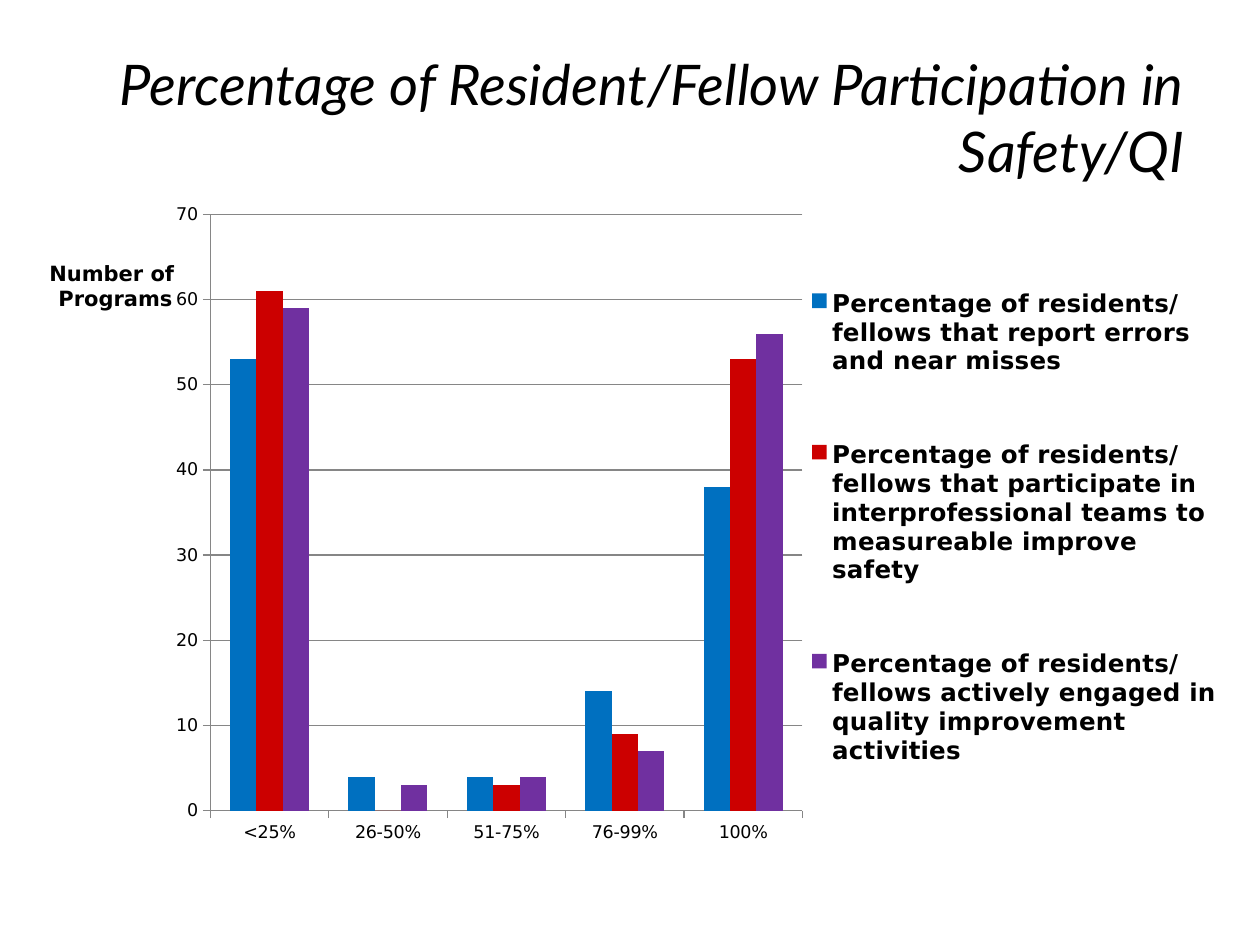
from lxml import etree
from pptx import Presentation
from pptx.chart.data import CategoryChartData
from pptx.dml.color import RGBColor
from pptx.enum.chart import XL_CHART_TYPE, XL_LEGEND_POSITION, XL_TICK_MARK
from pptx.enum.text import MSO_ANCHOR, PP_ALIGN
from pptx.oxml.ns import qn
from pptx.util import Inches, Pt

CLUSTERED = XL_CHART_TYPE.COLUMN_CLUSTERED
LEGEND_RIGHT = XL_LEGEND_POSITION.RIGHT
TICK_OUT, TICK_NONE = XL_TICK_MARK.OUTSIDE, XL_TICK_MARK.NONE
MIDDLE, RIGHT = MSO_ANCHOR.MIDDLE, PP_ALIGN.RIGHT

WIDTH, HEIGHT = Inches(10), Inches(7.5)
BLACK, GRAY = "000000", "868686"
HEADING_FONT, CHART_FONT = "Lato", "DejaVu Sans"
BRACKETS = ["<25%", "26-50%", "51-75%", "76-99%", "100%"]
PARTICIPATION = [
    ("Percentage of residents/fellows that report errors and near misses",
     (53, 4, 4, 14, 38), "0070C0"),
    ("Percentage of residents/fellows that participate in interprofessional "
     "teams to measureable improve safety", (61, 0, 3, 9, 53), "CC0000"),
    ("Percentage of residents/fellows actively engaged in quality improvement "
     "activities", (59, 3, 4, 7, 56), "7030A0"),
]


def color(hex_value):
    """Turn a hex string into a colour."""
    return RGBColor.from_string(hex_value)


def style_font(font, name, size, bold=False, italic=False):
    """Set a black font's face, size and emphasis."""
    font.name, font.size = name, Pt(size)
    font.bold, font.italic = bold, italic
    font.color.rgb = color(BLACK)


def style_line(line):
    """Draw a thin gray line."""
    line.color.rgb = color(GRAY)
    line.width = Pt(0.75)


def place(element, x, y, w=None, h=None, inner=False):
    """Lay out a chart part by shares of the chart's size."""
    layout = element.find(qn("c:layout"))
    if layout is None:
        layout = etree.Element(qn("c:layout"))
        before = [element.find(qn(tag)) for tag in ("c:tx", "c:legendPos")]
        anchor = next((part for part in before if part is not None), None)
        if anchor is None:
            element.insert(0, layout)
        else:
            anchor.addnext(layout)
    for child in list(layout):
        layout.remove(child)
    manual = etree.SubElement(layout, qn("c:manualLayout"))
    settings = [("layoutTarget", "inner" if inner else None),
                ("xMode", "edge"), ("yMode", "edge"),
                ("x", x), ("y", y), ("w", w), ("h", h)]
    for tag, value in settings:
        if value is not None:
            etree.SubElement(manual, qn(f"c:{tag}")).set("val", str(value))


def add_heading(slide, text):
    """Add the right-aligned italic heading."""
    box = slide.shapes.add_textbox(
        int(WIDTH * 0.05), int(HEIGHT * 0.04), int(WIDTH * 0.9), Inches(1.25))
    frame = box.text_frame
    frame.word_wrap = True
    frame.vertical_anchor = MIDDLE
    heading = frame.paragraphs[0]
    heading.text = text
    heading.alignment = RIGHT
    style_font(heading.font, HEADING_FONT, 32, italic=True)


def style_axes(chart):
    """Format both axes, the gridlines and the value axis title."""
    for axis in (chart.category_axis, chart.value_axis):
        axis.major_tick_mark, axis.minor_tick_mark = TICK_OUT, TICK_NONE
        style_line(axis.format.line)
    counts = chart.value_axis
    counts.minimum_scale, counts.maximum_scale, counts.major_unit = 0, 70, 10
    counts.has_major_gridlines = True
    style_line(counts.major_gridlines.format.line)
    frame = counts.axis_title.text_frame
    frame.text = "Number of \nPrograms"
    for paragraph in frame.paragraphs:
        style_font(paragraph.font, CHART_FONT, 12, bold=True)
    title = counts.axis_title._element
    body = title.find(".//" + qn("a:bodyPr"))
    body.set("rot", "0")
    body.set("vert", "horz")
    place(title, 0.02, 0.19)


def add_participation_chart(slide):
    """Add the clustered columns with their legend."""
    data = CategoryChartData()
    data.categories = BRACKETS
    for name, programs, _ in PARTICIPATION:
        data.add_series(name, programs)
    chart = slide.shapes.add_chart(
        CLUSTERED, Inches(0.17), Inches(0.83), Inches(9.61), Inches(6.32),
        data).chart
    style_font(chart.font, CHART_FONT, 10)
    chart.has_title = False
    plot = chart.plots[0]
    plot.gap_width, plot.overlap = 150, 0
    plot.vary_by_categories = False
    for series, (_, _, fill) in zip(plot.series, PARTICIPATION):
        series.format.fill.solid()
        series.format.fill.fore_color.rgb = color(fill)
    style_axes(chart)
    chart.has_legend = True
    legend = chart.legend
    legend.position = LEGEND_RIGHT
    legend.include_in_layout = False
    style_font(legend.font, CHART_FONT, 14, bold=True)
    place(legend._element, 0.65, 0.15, 0.34, 0.76)
    plot_area = chart._chartSpace.find(".//" + qn("c:plotArea"))
    place(plot_area, 0.156, 0.138, 0.489, 0.749, inner=True)


def main():
    """Build and save the slide."""
    deck = Presentation()
    deck.slide_width, deck.slide_height = WIDTH, HEIGHT
    slide = deck.slides.add_slide(deck.slide_layouts[6])
    add_participation_chart(slide)
    add_heading(slide, "Percentage of Resident/Fellow Participation in Safety/QI")
    deck.save("out.pptx")


if __name__ == "__main__":
    main()
